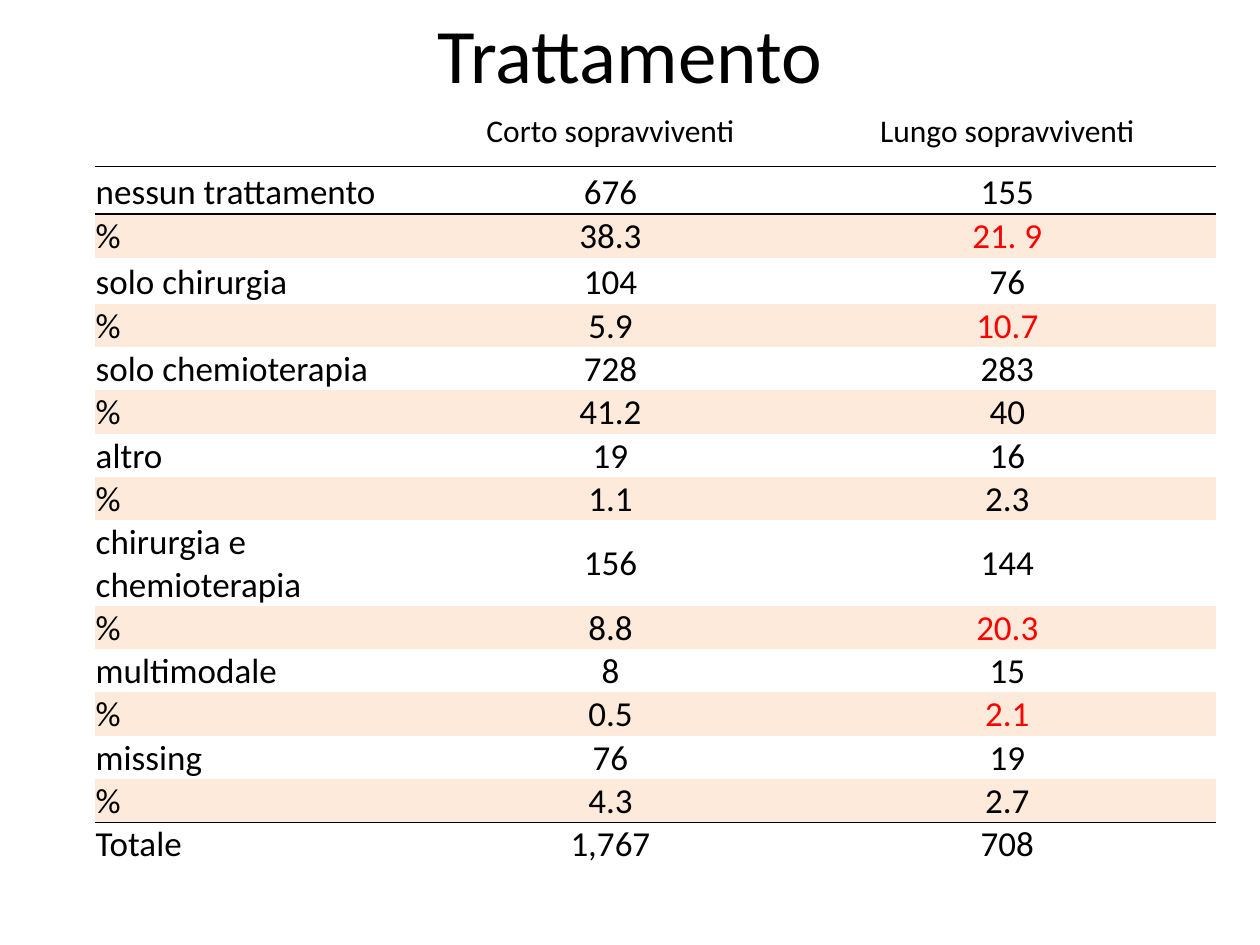
from dataclasses import dataclass

from lxml.etree import SubElement
from pptx import Presentation
from pptx.dml.color import RGBColor
from pptx.enum.text import MSO_ANCHOR as Anchor, PP_ALIGN as Align
from pptx.oxml.ns import qn
from pptx.util import Inches, Pt


@dataclass(frozen=True)
class Theme:
    font: str = "Calibri"
    ink: str = "000000"
    paper: str = "FFFFFF"
    band: str = "FDEADA"
    accent: str = "FF0000"
    title_size: int = 44
    header_size: int = 18
    body_size: int = 20
    rule_width: float = 1
    table_style: str = "{2D5ABB26-0587-4C30-8999-92F81FD0307C}"


HEADERS = ("", "Corto sopravviventi", "Lungo sopravviventi")
TREATMENTS = (
    ("nessun trattamento", ("676", "155"), ("38.3", "21. 9")),
    ("solo chirurgia", ("104", "76"), ("5.9", "10.7")),
    ("solo chemioterapia", ("728", "283"), ("41.2", "40")),
    ("altro", ("19", "16"), ("1.1", "2.3")),
    ("chirurgia e chemioterapia", ("156", "144"), ("8.8", "20.3")),
    ("multimodale", ("8", "15"), ("0.5", "2.1")),
    ("missing", ("76", "19"), ("4.3", "2.7")),
)
TOTAL = ("Totale", "1,767", "708")
HIGHLIGHTS = {"21. 9", "10.7", "20.3", "2.1"}
COLUMN_WIDTHS = (2.6, 2.99, 3.31)
ROW_HEIGHT = 0.34
SPECIAL_HEIGHTS = {0: 0.56, 1: 0.38, 2: 0.35, 3: 0.36, 9: 0.68}


class SlideBuilder:
    """Draws styled elements on the current slide."""

    def __init__(self, slide, theme):
        self.slide = slide
        self.theme = theme
        fill = slide.background.fill
        fill.solid()
        fill.fore_color.rgb = RGBColor.from_string(theme.paper)

    def set_text(self, para, text, size, color, align):
        para.text = text
        para.alignment = align
        para.font.name = self.theme.font
        para.font.size = Pt(size)
        para.font.color.rgb = RGBColor.from_string(color)

    def title(self, text, left, top, width, height):
        box = self.slide.shapes.add_textbox(
            Inches(left), Inches(top), Inches(width), Inches(height))
        box.text_frame.word_wrap = True
        self.set_text(box.text_frame.paragraphs[0], text,
                      self.theme.title_size, self.theme.ink, Align.CENTER)

    def rule(self, cell, side):
        properties = cell._tc.get_or_add_tcPr()
        line = SubElement(properties, qn(f"a:{side}"),
                          w=str(Pt(self.theme.rule_width)))
        solid = SubElement(line, qn("a:solidFill"))
        SubElement(solid, qn("a:srgbClr"), val=self.theme.ink)

    def cell(self, cell, text, size, align, anchor, banded):
        cell.margin_left = cell.margin_right = cell.margin_top = Inches(0.01)
        cell.margin_bottom = 0
        cell.vertical_anchor = anchor
        color = self.theme.accent if text in HIGHLIGHTS else self.theme.ink
        self.set_text(cell.text_frame.paragraphs[0], text, size, color, align)
        if banded:
            cell.fill.solid()
            cell.fill.fore_color.rgb = RGBColor.from_string(self.theme.band)
        else:
            cell.fill.background()

    def table(self, rows, left, top):
        heights = [SPECIAL_HEIGHTS.get(index, ROW_HEIGHT) for index in range(len(rows))]
        table = self.slide.shapes.add_table(
            len(rows), len(COLUMN_WIDTHS), Inches(left), Inches(top),
            Inches(sum(COLUMN_WIDTHS)), Inches(sum(heights))).table
        table.first_row = table.horz_banding = False
        table._tbl.tblPr.find(qn("a:tableStyleId")).text = self.theme.table_style
        for column, width in zip(table.columns, COLUMN_WIDTHS):
            column.width = Inches(width)
        ruled = {0: "lnB", 1: "lnT", len(rows) - 2: "lnB", len(rows) - 1: "lnT"}
        for row_index, values in enumerate(rows):
            table.rows[row_index].height = Inches(heights[row_index])
            header = row_index == 0
            size = self.theme.header_size if header else self.theme.body_size
            for column_index, text in enumerate(values):
                cell = table.cell(row_index, column_index)
                if row_index in ruled:
                    self.rule(cell, ruled[row_index])
                label = column_index == 0
                tall = heights[row_index] > 0.5
                self.cell(cell, text, size,
                          Align.LEFT if label else Align.CENTER,
                          Anchor.MIDDLE if tall and not label else Anchor.BOTTOM,
                          values[0] == "%")


def main():
    deck = Presentation()
    deck.slide_width, deck.slide_height = Inches(10), Inches(7.5)
    page = SlideBuilder(deck.slides.add_slide(deck.slide_layouts[6]), Theme())
    page.title("Trattamento", 0, 0, 10, 0.84)
    rows = [HEADERS]
    for name, counts, shares in TREATMENTS:
        rows += [(name, *counts), ("%", *shares)]
    rows.append(TOTAL)
    page.table(rows, 0.75, 0.76)
    deck.save("out.pptx")


if __name__ == "__main__":
    main()
